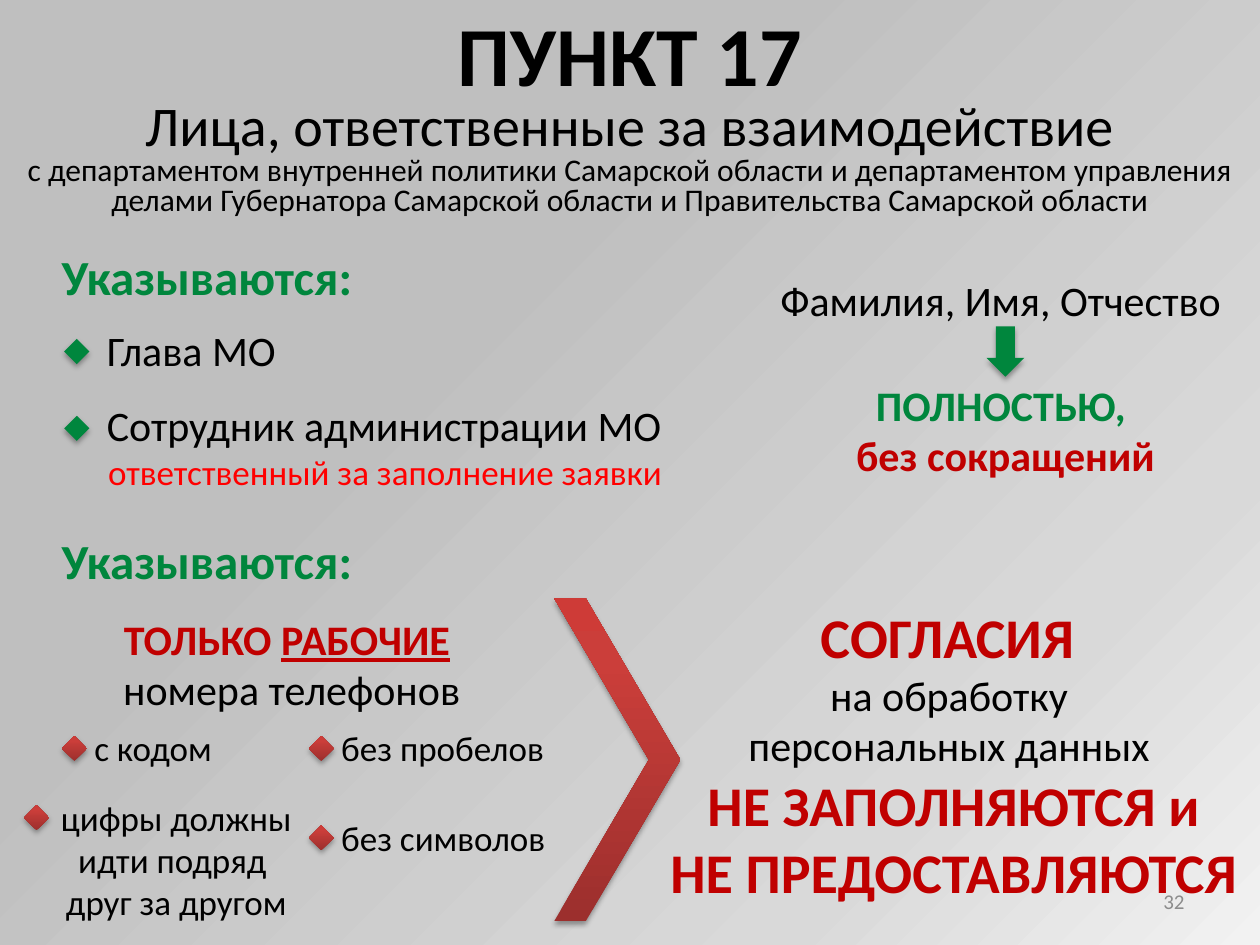
from dataclasses import dataclass

from lxml.etree import SubElement
from pptx import Presentation
from pptx.dml.color import RGBColor
from pptx.enum.shapes import MSO_SHAPE
from pptx.enum.text import MSO_ANCHOR, MSO_AUTO_SIZE, PP_ALIGN
from pptx.oxml import parse_xml
from pptx.oxml.ns import nsdecls, qn
from pptx.util import Inches, Pt

BLACK, GREEN, RED, BRIGHT_RED, GREY = "000000", "00863D", "C00000", "FF0000", "8C8C8C"
RED_GRADIENT = [(0, "9C2F2D"), (80, "CB3E3A"), (100, "CE3B37")]
BACKGROUND_GRADIENT = [(0, "BFBFBF"), (35, "BFBFBF"), (78, "D9D9D9"), (100, "F2F2F2")]
LEFT, CENTER, RIGHT = PP_ALIGN.LEFT, PP_ALIGN.CENTER, PP_ALIGN.RIGHT


@dataclass
class Run:
    text: str
    size: int = 24
    color: str = BLACK
    bold: bool = False
    underline: bool = False


@dataclass
class Note:
    """A text block; each line is a list of runs."""
    box: tuple
    lines: list
    align: PP_ALIGN = LEFT
    wrap: bool = True


@dataclass
class Mark:
    kind: MSO_SHAPE
    box: tuple
    color: str = ""  # empty means the red gradient


def rgb(color: str) -> RGBColor:
    return RGBColor.from_string(color)


def place(shape, box: tuple) -> None:
    shape.left, shape.top, shape.width, shape.height = map(Inches, box)


def write_line(paragraph, runs: list, align=LEFT, spacing=None) -> None:
    paragraph.alignment = align
    if spacing:
        paragraph.line_spacing = spacing
    for part in runs:
        run = paragraph.add_run()
        run.text = part.text
        font = run.font
        font.name, font.size, font.bold = "Calibri", Pt(part.size), part.bold
        font.underline = part.underline
        font.color.rgb = rgb(part.color)


def write_lines(frame, lines: list, align=LEFT, spacings=()) -> None:
    for i, runs in enumerate(lines):
        paragraph = frame.add_paragraph() if i else frame.paragraphs[0]
        write_line(paragraph, runs, align, spacings[i] if spacings else None)


def add_note(slide, note: Note):
    shape = slide.shapes.add_textbox(*map(Inches, note.box))
    frame = shape.text_frame
    frame.word_wrap = note.wrap
    frame.auto_size = MSO_AUTO_SIZE.SHAPE_TO_FIT_TEXT
    write_lines(frame, note.lines, note.align)
    return shape


def set_gradient(fill, owner, stops: list, angle: int) -> None:
    """Put a linear gradient where the owner's solid fill is."""
    fill.solid()
    solid = owner.find(qn("a:solidFill"))
    steps = "".join(f'<a:gs pos="{pos * 1000}"><a:srgbClr val="{color}"/></a:gs>'
                    for pos, color in stops)
    solid.getparent().replace(solid, parse_xml(
        f'<a:gradFill {nsdecls("a")} rotWithShape="1"><a:gsLst>{steps}</a:gsLst>'
        f'<a:lin ang="{angle * 60000}" scaled="1"/></a:gradFill>'))


def add_shadow(shape) -> None:
    shape.shadow.inherit = False
    effects = shape.element.spPr.find(qn("a:effectLst"))
    outer = SubElement(effects, qn("a:outerShdw"), blurRad=str(Pt(3.1)),
                       dist=str(Pt(1.8)), dir="5400000", rotWithShape="0")
    color = SubElement(outer, qn("a:srgbClr"), val=BLACK)
    SubElement(color, qn("a:alpha"), val="35000")


def add_mark(slide, mark: Mark):
    shape = slide.shapes.add_shape(mark.kind, *map(Inches, mark.box))
    if mark.color:
        shape.fill.solid()
        shape.fill.fore_color.rgb = rgb(mark.color)
    else:
        set_gradient(shape.fill, shape.element.spPr, RED_GRADIENT, 270)
    shape.line.fill.background()
    add_shadow(shape)
    return shape


def diamond(left: float, top: float, color: str = "") -> Mark:
    return Mark(MSO_SHAPE.DIAMOND, (left, top, 0.2, 0.2), color)


def heading(top: float) -> Note:
    return Note((0.39, top, 2.54, 0.57), [[Run("Указываются:", 28, GREEN, True)]], wrap=False)


TITLE = [
    [Run("ПУНКТ 17", 48, bold=True)],
    [Run("Лица, ответственные за взаимодействие", 32)],
    [Run("с департаментом внутренней политики Самарской области и департаментом управления "
         "делами Губернатора Самарской области и Правительства Самарской области", 18)],
]

NOTES = [
    # Who is named
    heading(1.91),
    Note((0.75, 2.53, 1.56, 0.5), [[Run("Глава МО")]], wrap=False),
    Note((0.75, 3.12, 5, 0.5), [[Run("Сотрудник администрации МО")]]),
    Note((0.76, 3.53, 4.64, 0.44),
         [[Run("ответственный за заполнение заявки", 20, BRIGHT_RED)]], wrap=False),
    # Full name
    Note((6.01, 2.13, 3.94, 0.5), [[Run("Фамилия, Имя, Отчество ")]], CENTER),
    Note((6.62, 2.96, 2.72, 0.91),
         [[Run("ПОЛНОСТЬЮ, ", color=GREEN, bold=True)],
          [Run("без сокращений", color=RED, bold=True)]], CENTER),
    # Phone numbers
    heading(4.16),
    Note((0.86, 4.82, 2.91, 0.91),
         [[Run("ТОЛЬКО ", color=RED, bold=True),
           Run("РАБОЧИЕ", color=RED, bold=True, underline=True),
           Run(" ", color=RED, bold=True)],
          [Run("номера телефонов")]], CENTER, wrap=False),
    Note((0.65, 5.72, 1.2, 0.44), [[Run("с кодом", 20)]], wrap=False),
    Note((2.61, 5.72, 1.82, 0.44), [[Run("без пробелов", 20)]], wrap=False),
    Note((2.61, 6.43, 1.84, 0.44), [[Run("без символов", 20)]], wrap=False),
    Note((0.35, 6.27, 2.1, 1.11),
         [[Run("цифры должны идти подряд ", 20)], [Run("друг за другом", 20)]], CENTER),
    # Consents
    Note((5.19, 4.73, 4.76, 2.52),
         [[Run("СОГЛАСИЯ ", 32, RED, True)],
          [Run("на обработку ")],
          [Run("персональных данных ")],
          [Run("НЕ ЗАПОЛНЯЮТСЯ и", 32, RED, True)],
          [Run("НЕ ПРЕДОСТАВЛЯЮТСЯ", 32, RED, True)]], CENTER),
]

MARKS = [
    diamond(0.51, 2.69, GREEN), diamond(0.51, 3.3, GREEN),
    Mark(MSO_SHAPE.DOWN_ARROW, (7.83, 2.59, 0.3, 0.4), GREEN),
    diamond(0.49, 5.84), diamond(2.45, 5.84), diamond(2.45, 6.55), diamond(0.19, 6.39),
]


def main() -> None:
    deck = Presentation()
    deck.slide_width, deck.slide_height = Inches(10), Inches(7.5)
    slide = deck.slides.add_slide(deck.slide_layouts[5])
    background = slide.background.fill
    background.solid()
    set_gradient(background, slide.element.find(".//" + qn("p:bgPr")), BACKGROUND_GRADIENT, 45)

    # Title
    title = slide.shapes.title
    place(title, (0, -0.03, 10, 1.82))
    title.text_frame.word_wrap = True
    title.text_frame.auto_size = MSO_AUTO_SIZE.SHAPE_TO_FIT_TEXT
    title.text_frame.vertical_anchor = MSO_ANCHOR.TOP
    write_lines(title.text_frame, TITLE, CENTER, (None, 0.8, 0.8))

    # Body
    for note in NOTES:
        add_note(slide, note)
    for mark in MARKS:
        add_mark(slide, mark)
    chevron = add_mark(slide, Mark(MSO_SHAPE.CHEVRON, (4.4, 4.75, 1, 2.56)))
    chevron.adjustments[0] = 0.75

    # Slide number
    number = add_note(slide, Note((7.17, 6.95, 2.33, 0.4), [[Run("32", 12, GREY)]], RIGHT))
    number.text_frame.auto_size = MSO_AUTO_SIZE.NONE
    number.text_frame.vertical_anchor = MSO_ANCHOR.MIDDLE

    deck.save("out.pptx")


if __name__ == "__main__":
    main()
